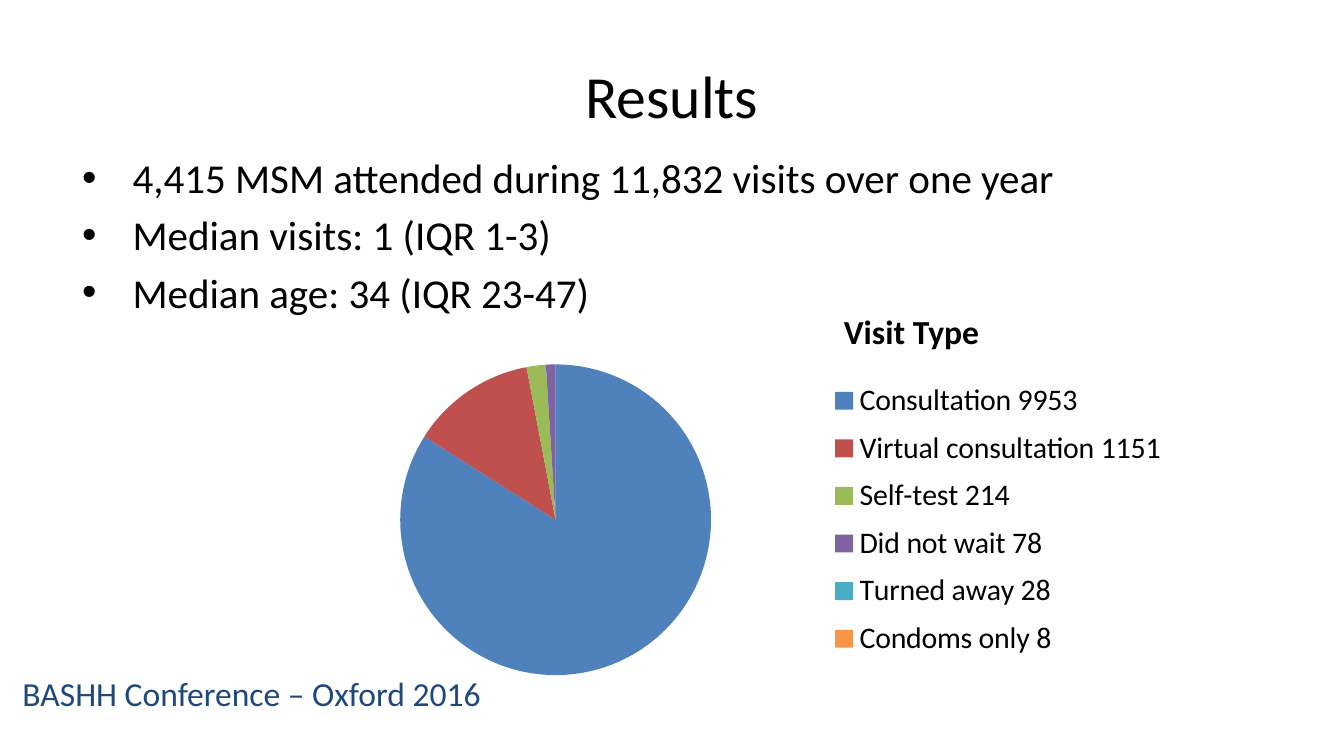
from dataclasses import dataclass

from lxml.etree import SubElement
from pptx import Presentation
from pptx.chart.data import CategoryChartData
from pptx.dml.color import RGBColor
from pptx.enum.chart import XL_CHART_TYPE as ChartType, XL_LEGEND_POSITION as LegendPos
from pptx.enum.text import MSO_ANCHOR as Anchor, PP_ALIGN as Align
from pptx.oxml.ns import qn
from pptx.util import Pt


@dataclass(frozen=True)
class Theme:
    font: str = "Calibri"
    ink: str = "000000"
    footer_ink: str = "1F497D"
    title: int = 32
    body: int = 22
    label: int = 18
    legend: int = 16


@dataclass(frozen=True)
class Box:
    left: float
    top: float
    width: float
    height: float

    def points(self) -> tuple:
        return Pt(self.left), Pt(self.top), Pt(self.width), Pt(self.height)


@dataclass(frozen=True)
class TextBlock:
    box: Box
    lines: tuple
    size: int
    color: str = Theme.ink
    bold: bool = False
    bullets: bool = False
    wrap: bool = True
    align: Align = Align.LEFT
    anchor: Anchor = Anchor.TOP


@dataclass(frozen=True)
class Slice:
    label: str
    percent: int
    color: str


THEME = Theme()
INDENT = Pt(27)

TEXTS = (
    TextBlock(Box(5, 357, 344, 48), ("BASHH Conference – Oxford 2016",),
              THEME.label, THEME.footer_ink),
    TextBlock(Box(36, 16.5, 648, 68), ("Results",), THEME.title,
              align=Align.CENTER, anchor=Anchor.MIDDLE),
    TextBlock(Box(37, 78, 648, 267),
              ("4,415 MSM attended during 11,832 visits over one year",
               "Median visits: 1 (IQR 1-3)",
               "Median age: 34 (IQR 23-47)"),
              THEME.body, bullets=True),
    TextBlock(Box(445, 163, 88, 29), ("Visit Type",), THEME.label,
              bold=True, wrap=False),
)

VISITS = (
    Slice("Consultation 9953", 84, "4F81BD"),
    Slice("Virtual consultation 1151", 13, "C0504D"),
    Slice("Self-test 214", 2, "9BBB59"),
    Slice("Did not wait 78", 1, "8064A2"),
    Slice("Turned away 28", 0, "4BACC6"),
    Slice("Condoms only 8", 0, "F79646"),
)
CHART_BOX = Box(133, 186, 499, 185)
PLOT_AREA = Box(0.06, 0.05, 0.54, 0.9)
LEGEND_AREA = Box(0.62, 0.07, 0.37, 0.86)


def style_font(font, size: int, color: str, bold: bool = False) -> None:
    font.name = THEME.font
    font.size = Pt(size)
    font.bold = bold
    font.color.rgb = RGBColor.from_string(color)


def add_bullet(p) -> None:
    props = p._p.get_or_add_pPr()
    props.set("marL", str(INDENT))
    props.set("indent", str(-INDENT))
    SubElement(props, qn("a:buFont")).set("typeface", "Arial")
    SubElement(props, qn("a:buChar")).set("char", "•")


def add_text(s, block: TextBlock) -> None:
    tf = s.shapes.add_textbox(*block.box.points()).text_frame
    tf.word_wrap = block.wrap
    tf.vertical_anchor = block.anchor
    tf.text = "\n".join(block.lines)
    for i, p in enumerate(tf.paragraphs):
        p.alignment = block.align
        if block.bullets:
            add_bullet(p)
            if i:
                p.space_before = Pt(block.size * 0.2)
        for r in p.runs:
            style_font(r.font, block.size, block.color, block.bold)


def set_layout(layout, area: Box, inner: bool = False) -> None:
    """Fix a chart part in place, in fractions of the chart's size."""
    for child in list(layout):
        layout.remove(child)
    manual = SubElement(layout, qn("c:manualLayout"))
    values = {"xMode": "edge", "yMode": "edge", "x": area.left, "y": area.top,
              "w": area.width, "h": area.height}
    if inner:
        values = {"layoutTarget": "inner", **values}
    for tag, value in values.items():
        SubElement(manual, qn(f"c:{tag}")).set("val", str(value))


def layout_of(part, after: str | None = None):
    """Return the part's layout element, placed after the named child."""
    layout = part.find(qn("c:layout"))
    if layout is None:
        layout = SubElement(part, qn("c:layout"))
        part.insert(0 if after is None else part.index(part.find(qn(after))) + 1, layout)
    return layout


def add_pie(s, slices: tuple) -> None:
    data = CategoryChartData()
    data.categories = [item.label for item in slices]
    data.add_series("Series 1", [item.percent for item in slices])
    chart = s.shapes.add_chart(ChartType.PIE, *CHART_BOX.points(), data).chart
    chart.has_title = False
    style_font(chart.font, THEME.legend, THEME.ink)

    chart.has_legend = True
    chart.legend.position = LegendPos.RIGHT
    chart.legend.include_in_layout = False
    style_font(chart.legend.font, THEME.legend, THEME.ink)
    set_layout(layout_of(chart.legend._element, "c:legendPos"), LEGEND_AREA)

    plot = chart.plots[0]
    plot.vary_by_categories = True
    set_layout(layout_of(plot._element.getparent()), PLOT_AREA, inner=True)
    for i, item in enumerate(slices):
        fill = plot.series[0].points[i].format.fill
        fill.solid()
        fill.fore_color.rgb = RGBColor.from_string(item.color)


def main() -> None:
    prs = Presentation()
    prs.slide_width, prs.slide_height = Pt(720), Pt(405)
    s = prs.slides.add_slide(prs.slide_layouts[6])
    *under_chart, chart_heading = TEXTS
    for block in under_chart:
        add_text(s, block)
    add_pie(s, VISITS)
    add_text(s, chart_heading)
    prs.save("out.pptx")


if __name__ == "__main__":
    main()
